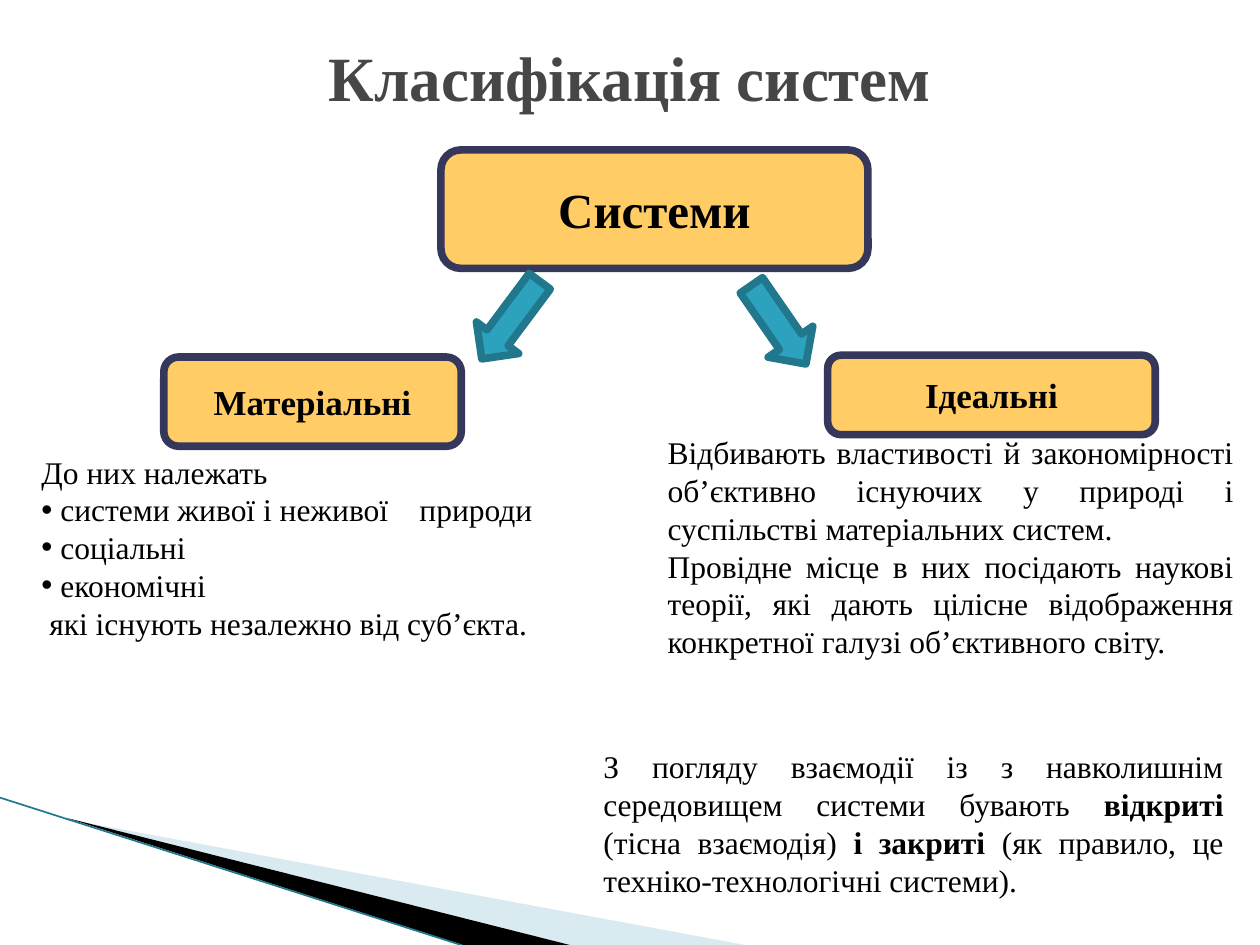
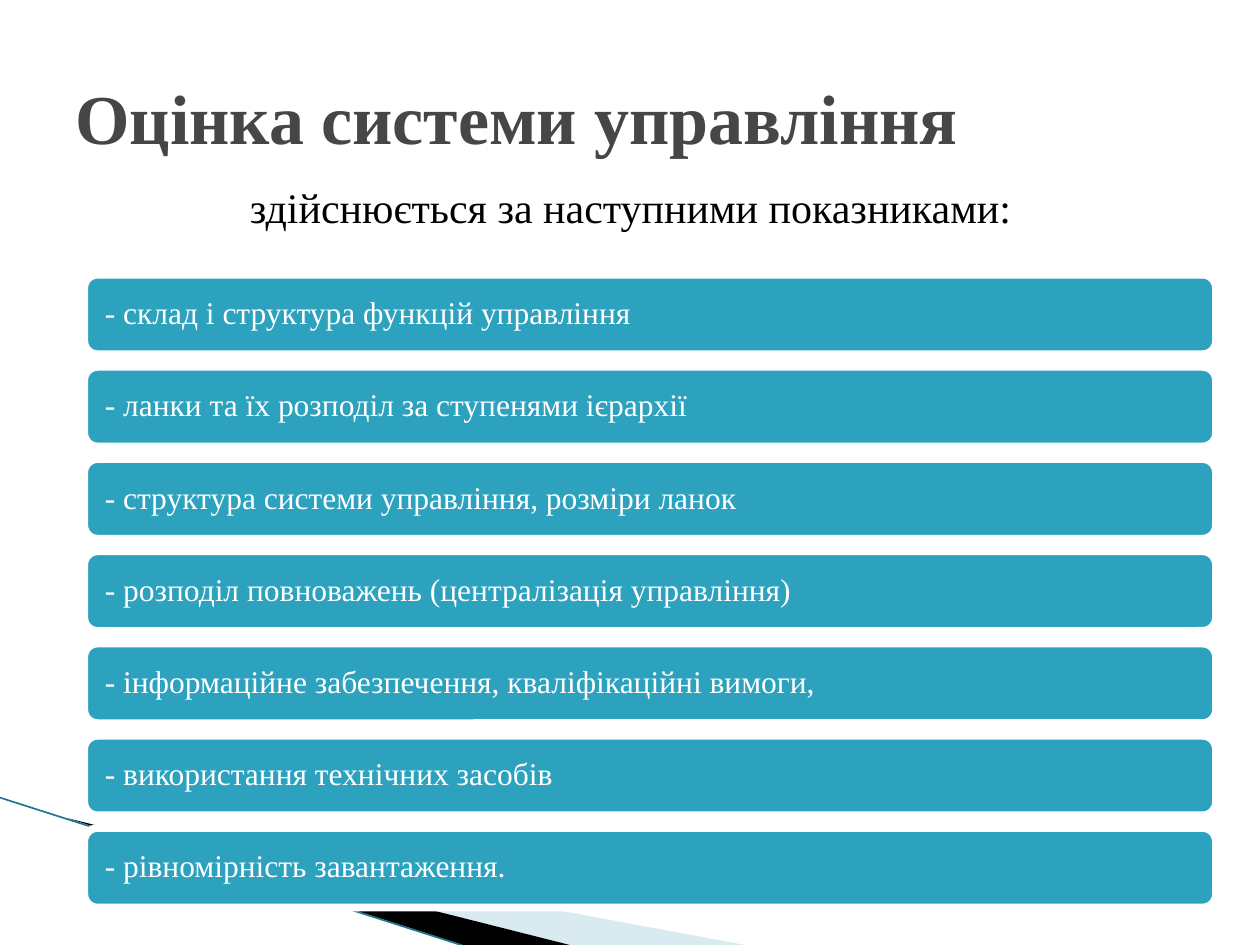
"""Builds two slides on the classification and assessment of systems."""
from dataclasses import dataclass

from lxml.etree import SubElement
from pptx import Presentation
from pptx.dml.color import RGBColor
from pptx.enum.shapes import MSO_CONNECTOR, MSO_SHAPE
from pptx.enum.text import MSO_ANCHOR, MSO_AUTO_SIZE, PP_ALIGN
from pptx.oxml.ns import qn
from pptx.util import Pt

FONT = "Times New Roman"
BLACK = RGBColor(0x00, 0x00, 0x00)
WHITE = RGBColor(0xFF, 0xFF, 0xFF)
GREY = RGBColor(0x46, 0x46, 0x46)
ORANGE = RGBColor(0xFF, 0xCC, 0x66)
NAVY = RGBColor(0x35, 0x38, 0x5A)
TEAL = RGBColor(0x2D, 0xA2, 0xBF)
DARK_TEAL = RGBColor(0x21, 0x78, 0x8D)
PALE_BLUE = RGBColor(0xD9, 0xEA, 0xF1)
OUTLINE = 4.33


@dataclass(frozen=True)
class Frame:
    left: float
    top: float
    width: float
    height: float

    def lengths(self) -> tuple:
        return tuple(Pt(v) for v in (self.left, self.top, self.width, self.height))


@dataclass(frozen=True)
class Style:
    size: float
    color: RGBColor = BLACK
    bold: bool = False
    align: PP_ALIGN = PP_ALIGN.CENTER
    spacing: float = 1.0


@dataclass(frozen=True)
class Para:
    texts: tuple
    indent: float = 0
    bullet: bool = False
    tab: float = 0


@dataclass(frozen=True)
class Node:
    text: str
    frame: Frame
    size: float


@dataclass(frozen=True)
class Arrow:
    frame: Frame
    rotation: float


@dataclass(frozen=True)
class Wedge:
    points: tuple
    color: RGBColor


WEDGES = (
    Wedge(((39.6, 468.4), (425.7, 540), (325, 540)), PALE_BLUE),
    Wedge(((38.2, 467.4), (325.7, 540), (264.6, 540)), BLACK),
)
NODES = (
    Node("Системи", Frame(252, 85.7, 244, 67.7), 28),
    Node("Матеріальні", Frame(93.6, 204, 170, 51), 20),
    Node("Ідеальні", Frame(473, 203, 187.2, 45.4), 20),
)
ARROWS = (
    Arrow(Frame(264.2, 167.8, 55.4, 30.2), 306.7),
    Arrow(Frame(417.6, 170, 54.7, 31), 235.3),
)
MATERIAL = (
    Para(("До них належать",)),
    Para(("системи живої і неживої\tприроди",), 10.8, True, 216),
    Para(("соціальні",), 10.8, True),
    Para(("економічні",), 10.8, True),
    Para(("які існують незалежно від суб’єкта.",), 4.5),
)
IDEAL = (
    Para(("Відбивають властивості й закономірності об’єктивно існуючих "
          "у природі і суспільстві матеріальних систем.",)),
    Para(("Провідне місце в них посідають наукові теорії, які дають цілісне "
          "відображення конкретної галузі об’єктивного світу.",)),
)
OPENNESS = (
    Para(("З погляду взаємодії із з навколишнім середовищем системи бувають ",
          "відкриті ", "(тісна взаємодія) ", "і закриті ",
          "(як правило, це техніко-технологічні системи).")),
)
INDICATORS = (
    "- склад і структура функцій управління",
    "- ланки та їх розподіл за ступенями ієрархії",
    "- структура системи управління, розміри ланок",
    "- розподіл повноважень (централізація управління)",
    "- інформаційне забезпечення, кваліфікаційні вимоги,",
    "- використання технічних засобів",
    "- рівномірність завантаження.",
)
BODY = Style(18, align=PP_ALIGN.JUSTIFY)
BAR = Style(18, WHITE, align=PP_ALIGN.LEFT, spacing=0.9)
BAR_FRAME = Frame(48.2, 157, 646.6, 45.4)
BAR_PITCH = 52.7


def set_indent(p, para: Para) -> None:
    """Set the indent, bullet and tab stop of a paragraph."""
    pPr = p._p.get_or_add_pPr()
    pPr.set("marL", str(Pt(para.indent)))
    pPr.set("indent", str(Pt(-para.indent if para.bullet else 0)))
    if para.bullet:
        SubElement(pPr, qn("a:buFont"), typeface="Arial")
        SubElement(pPr, qn("a:buChar"), char="•")
    else:
        SubElement(pPr, qn("a:buNone"))
    if para.tab:
        tabs = SubElement(pPr, qn("a:tabLst"))
        SubElement(tabs, qn("a:tab"), pos=str(Pt(para.tab)), algn="l")


def write(sp, paras: tuple, style: Style, anchor=MSO_ANCHOR.TOP) -> None:
    """Fill a shape with paragraphs whose every second run is bold."""
    tf = sp.text_frame
    tf.word_wrap = True
    tf.auto_size = MSO_AUTO_SIZE.NONE
    tf.vertical_anchor = anchor
    for i, para in enumerate(paras):
        p = tf.add_paragraph() if i else tf.paragraphs[0]
        set_indent(p, para)
        p.alignment = style.align
        p.line_spacing = style.spacing
        p.space_before = Pt(0)
        for j, text in enumerate(para.texts):
            r = p.add_run()
            r.text = text
            r.font.name = FONT
            r.font.size = Pt(style.size)
            r.font.bold = style.bold or j % 2 == 1
            r.font.color.rgb = style.color


def place(sp, frame: Frame) -> None:
    """Move a placeholder to a frame."""
    sp.left, sp.top, sp.width, sp.height = frame.lengths()


def add_text(slide, frame: Frame, paras: tuple, style: Style) -> None:
    """Add a text box."""
    write(slide.shapes.add_textbox(*frame.lengths()), paras, style)


def add_box(slide, kind, frame: Frame, fill: RGBColor, line: RGBColor):
    """Add a filled and outlined preset shape."""
    sp = slide.shapes.add_shape(kind, *frame.lengths())
    sp.shadow.inherit = False
    sp.fill.solid()
    sp.fill.fore_color.rgb = fill
    sp.line.color.rgb = line
    sp.line.width = Pt(OUTLINE)
    return sp


def add_corner(slide) -> None:
    """Draw the wedges and the line in the lower left corner."""
    for wedge in WEDGES:
        start, *rest = [(Pt(x), Pt(y)) for x, y in wedge.points]
        builder = slide.shapes.build_freeform(*start)
        builder.add_line_segments(rest, close=True)
        sp = builder.convert_to_shape()
        sp.shadow.inherit = False
        sp.fill.solid()
        sp.fill.fore_color.rgb = wedge.color
        sp.line.fill.background()
    line = slide.shapes.add_connector(
        MSO_CONNECTOR.STRAIGHT, Pt(0), Pt(455.8), Pt(263.5), Pt(540))
    line.line.color.rgb = DARK_TEAL
    line.line.width = Pt(0.95)
    SubElement(line._element.spPr, qn("a:effectLst"))


def new_slide(prs, layout: int, title: str, frame: Frame, size: float, align):
    """Add a slide with the shared corner and title style."""
    slide = prs.slides.add_slide(prs.slide_layouts[layout])
    add_corner(slide)
    place(slide.shapes.title, frame)
    write(slide.shapes.title, (Para((title,)),),
          Style(size, GREY, True, align), MSO_ANCHOR.MIDDLE)
    return slide


def build_classification(prs) -> None:
    """Build the slide with the classification diagram."""
    slide = new_slide(prs, 1, "Класифікація систем",
                      Frame(36, 18, 648, 51), 36, PP_ALIGN.CENTER)
    add_text(slide, Frame(374.4, 244, 337.7, 138.2), IDEAL, BODY)
    for node in NODES:
        sp = add_box(slide, MSO_SHAPE.ROUNDED_RECTANGLE, node.frame, ORANGE, NAVY)
        write(sp, (Para((node.text,)),), Style(node.size, bold=True), MSO_ANCHOR.MIDDLE)
    for arrow in ARROWS:
        sp = add_box(slide, MSO_SHAPE.LEFT_ARROW, arrow.frame, TEAL, DARK_TEAL)
        sp.rotation = arrow.rotation
    body = slide.placeholders[1]
    place(body, Frame(16.5, 255, 300.2, 138.2))
    write(body, MATERIAL, BODY)
    add_text(slide, Frame(337.7, 423.4, 368.6, 116.6), OPENNESS, BODY)


def build_assessment(prs) -> None:
    """Build the slide with the list of indicators."""
    slide = new_slide(prs, 5, "Оцінка системи управління",
                      Frame(36, 21.6, 648, 90), 40, PP_ALIGN.LEFT)
    for i, text in enumerate(INDICATORS):
        frame = Frame(BAR_FRAME.left, BAR_FRAME.top + i * BAR_PITCH,
                      BAR_FRAME.width, BAR_FRAME.height)
        sp = add_box(slide, MSO_SHAPE.ROUNDED_RECTANGLE, frame, TEAL, WHITE)
        write(sp, (Para((text,)),), BAR, MSO_ANCHOR.MIDDLE)
        sp.text_frame.margin_left = Pt(9.5)
    add_text(slide, Frame(65.5, 100, 589.7, 36),
             (Para(("здійснюється за наступними показниками:",)),), Style(24))


def main() -> None:
    """Build and save the presentation."""
    prs = Presentation()
    prs.slide_width, prs.slide_height = Pt(720), Pt(540)
    build_classification(prs)
    build_assessment(prs)
    prs.save("out.pptx")


if __name__ == "__main__":
    main()
